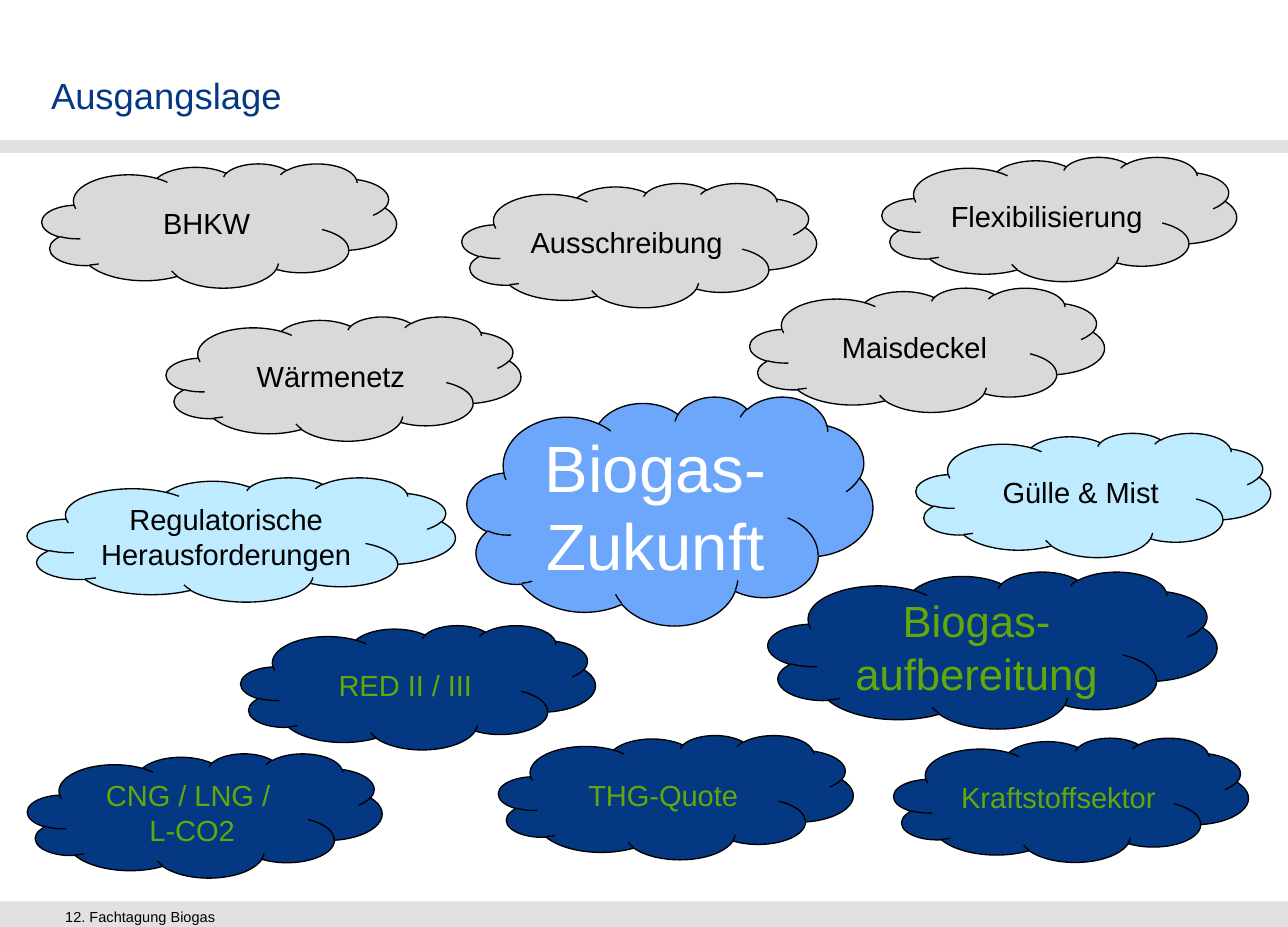
from pptx import Presentation
from pptx.dml.color import RGBColor
from pptx.enum.shapes import MSO_SHAPE as Preset
from pptx.enum.text import MSO_ANCHOR as Anchor, PP_ALIGN as Align
from pptx.util import Inches, Pt

CM_PER_INCH = 2.54
PAGE_WIDTH = 25 / CM_PER_INCH
PAGE_HEIGHT = 18 / CM_PER_INCH
COLORS = {
    "bar": "E1E1E1",
    "navy": "043882",
    "black": "000000",
    "white": "FFFFFF",
    "green": "64A70B",
    "grey": "D9D9D9",
    "sky": "BEEBFF",
    "blue": "6DA7FB",
}
TEXT_ON = {"grey": "black", "sky": "black", "navy": "green", "blue": "white"}
TOPIC_SIZE = (2.71, 0.95)
CLOUDS = [
    ("Biogas-Zukunft", "blue", 3.57, 3.03, (3.1, 1.75), 36),
    ("Ausschreibung", "grey", 3.53, 1.4),
    ("BHKW", "grey", 0.32, 1.25),
    ("Gülle & Mist", "sky", 7, 3.31),
    ("Wärmenetz", "grey", 1.27, 2.42),
    ("Maisdeckel", "grey", 5.73, 2.2),
    ("Flexibilisierung", "grey", 6.74, 1.2),
    ("Kraftstoffsektor", "navy", 6.83, 5.64),
    ("Biogas-aufbereitung", "navy", 5.87, 4.37, (3.43, 1.2), 24),
    ("RED II / III", "navy", 1.84, 4.78),
    ("Regulatorische Herausforderungen", "sky", 0.21, 3.65, (3.27, 0.95)),
    ("CNG / LNG / \vL-CO2", "navy", 0.21, 5.76),
    ("THG-Quote", "navy", 3.81, 5.62),
]


def color(name):
    """Return the named colour."""
    return RGBColor.from_string(COLORS[name])


def write(shape, text, size, ink, align=Align.LEFT):
    """Put one styled paragraph into a shape and return it."""
    shape.text_frame.word_wrap = True
    para = shape.text_frame.paragraphs[0]
    para.text = text
    para.alignment = align
    para.font.name = "Arial"
    para.font.size = Pt(size)
    para.font.color.rgb = color(ink)
    return para


def add_filled(page, preset, place, fill):
    """Add a preset shape with a plain fill and no shadow."""
    shape = page.shapes.add_shape(preset, *map(Inches, place))
    shape.shadow.inherit = False
    shape.fill.solid()
    shape.fill.fore_color.rgb = color(fill)
    return shape


def add_bar(page, top, height):
    """Add a grey bar across the whole page."""
    bar = add_filled(page, Preset.RECTANGLE, (0, top, PAGE_WIDTH, height), "bar")
    bar.line.fill.background()


def add_cloud(page, text, fill, left, top, size=TOPIC_SIZE, points=16):
    """Add an outlined cloud with centred text."""
    cloud = add_filled(page, Preset.CLOUD, (left, top, *size), fill)
    cloud.line.color.rgb = color("black")
    cloud.line.width = Pt(0.75)
    cloud.text_frame.vertical_anchor = Anchor.MIDDLE
    write(cloud, text, points, TEXT_ON[fill], Align.CENTER)


def add_title(page, text):
    """Add the heading above the upper bar."""
    box = page.shapes.add_textbox(Inches(0.39), Inches(0), Inches(9.06), Inches(0.89))
    frame = box.text_frame
    frame.margin_left = frame.margin_right = Inches(0)
    frame.margin_top = frame.margin_bottom = Inches(0)
    frame.vertical_anchor = Anchor.BOTTOM
    write(box, text, 20, "navy").line_spacing = Pt(24)


def add_footer(page, text):
    """Add the event name on the lower bar."""
    box = page.shapes.add_textbox(Inches(0.4), Inches(6.89), Inches(8.7), Inches(0.17))
    write(box, text, 8, "black")


def main():
    """Build the slide and save it."""
    deck = Presentation()
    deck.slide_width = Inches(PAGE_WIDTH)
    deck.slide_height = Inches(PAGE_HEIGHT)
    page = deck.slides.add_slide(deck.slide_layouts[6])
    add_bar(page, 6.89, 0.2)
    add_bar(page, 1.07, 0.1)
    add_title(page, "Ausgangslage")
    add_footer(page, "12. Fachtagung Biogas")
    for cloud in CLOUDS:
        add_cloud(page, *cloud)
    deck.save("out.pptx")


if __name__ == "__main__":
    main()
